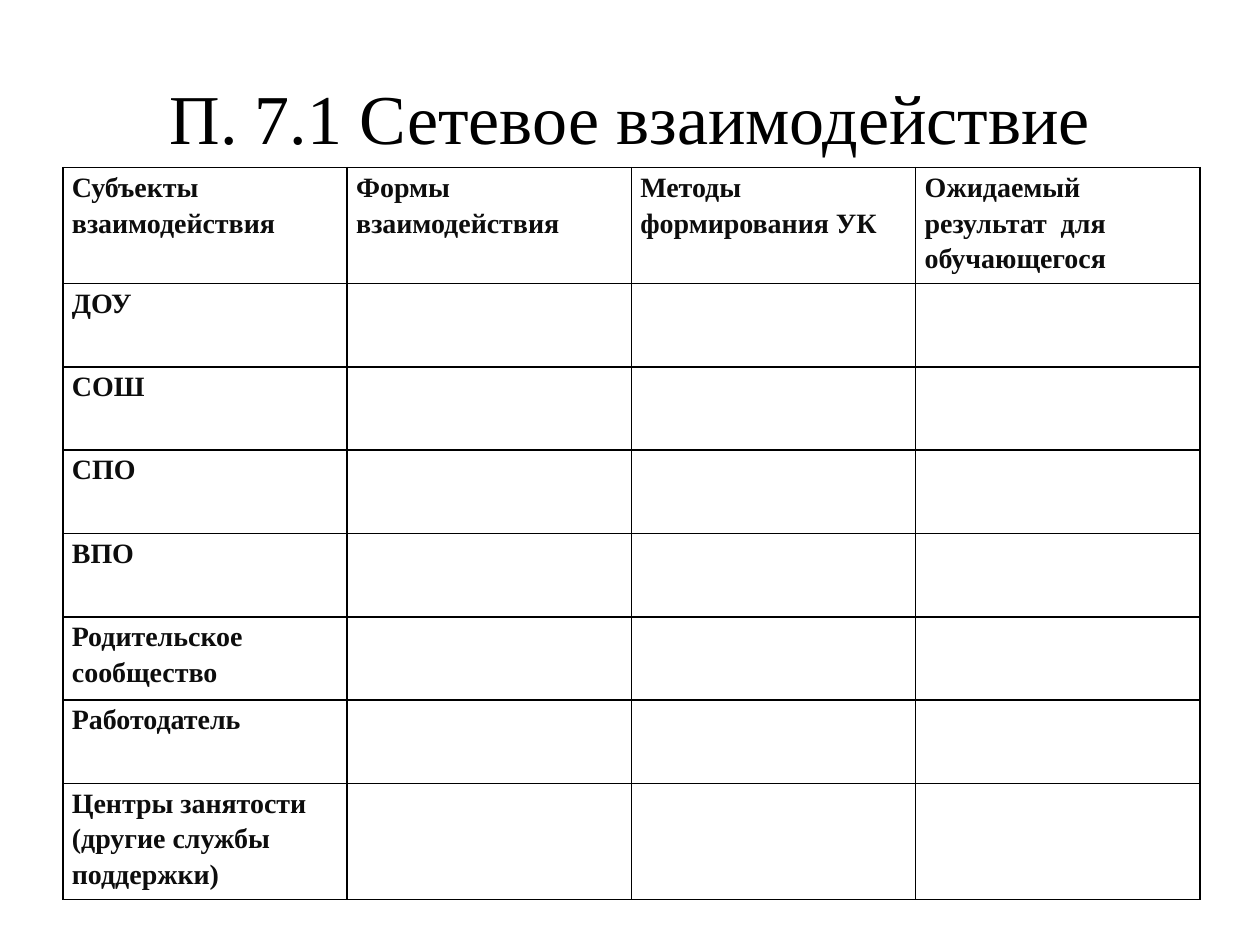
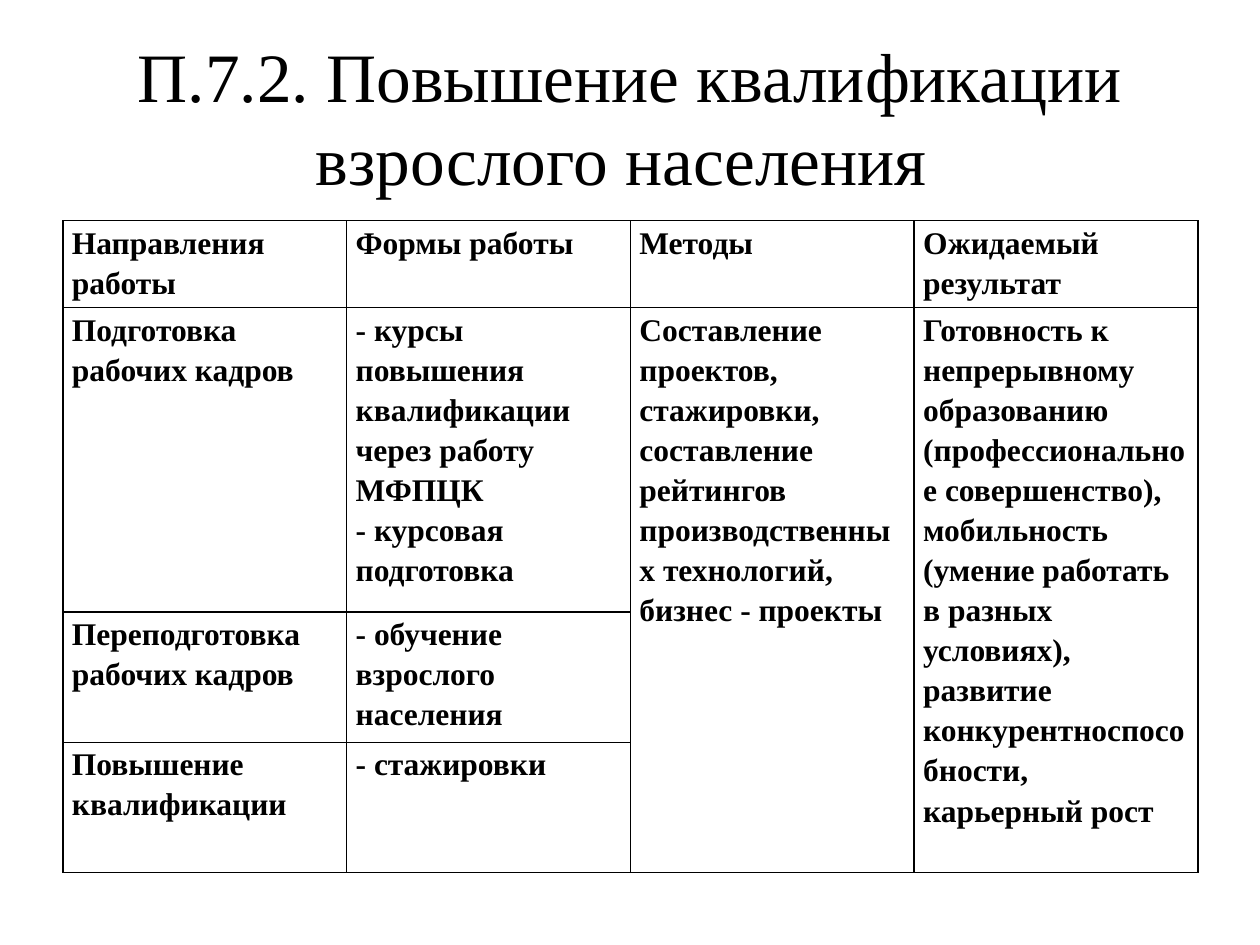
from lxml import etree
from pptx import Presentation
from pptx.dml.color import RGBColor
from pptx.enum.text import MSO_ANCHOR, PP_ALIGN
from pptx.oxml.ns import qn
from pptx.util import Cm, Pt

CENTER = PP_ALIGN.CENTER
MIDDLE = MSO_ANCHOR.MIDDLE

FONT = "Times New Roman"
BLACK = "000000"
DARK = "0D0D0D"
LEFT = 1.27
TITLE_BOX = (LEFT, 0.76, 22.86, 3.18)
CELL_MARGINS = {"margin_left": Cm(0.18), "margin_right": Cm(0.18),
                "margin_top": 0, "margin_bottom": 0}

# Each row lists its cells; a cell is a list of paragraphs or a single one.
SLIDES = [
    {
        "title": "П. 7.1 Сетевое взаимодействие",
        "title_size": 40,
        "top": 3.38,
        "column_width": 5.73,
        "row_heights": [2.15] + [1.68] * 6 + [2.2],
        "text": {"size": 16, "color": DARK},
        "rows": [
            ["Субъекты взаимодействия", "Формы взаимодействия",
             "Методы формирования УК", "Ожидаемый результат  для обучающегося"],
            ["ДОУ"],
            ["СОШ"],
            ["СПО"],
            ["ВПО"],
            ["Родительское сообщество"],
            ["Работодатель"],
            ["Центры занятости (другие службы поддержки)"],
        ],
        "merges": [],
    },
    {
        "title": "П.7.2. Повышение квалификации взрослого населения ",
        "title_size": 39.6,
        "top": 4.45,
        "column_width": 5.72,
        "row_heights": [1.61, 5.65, 2.42, 2.43],
        "text": {"size": 18, "color": BLACK},
        "rows": [
            ["Направления работы", "Формы работы", "Методы", "Ожидаемый результат"],
            ["Подготовка рабочих кадров",
             ["- курсы повышения квалификации через работу МФПЦК",
              "- курсовая подготовка"],
             "Составление проектов, стажировки, составление рейтингов "
             "производственных технологий, бизнес - проекты",
             "Готовность к непрерывному образованию (профессиональное "
             "совершенство), мобильность (умение работать в разных условиях), "
             "развитие конкурентноспособности, карьерный рост"],
            ["Переподготовка рабочих кадров", "- обучение взрослого населения"],
            ["Повышение квалификации", "- стажировки"],
        ],
        "merges": [((1, 2), (3, 2)), ((1, 3), (3, 3))],
    },
]


def style_font(font, size, color, bold=False):
    for name, value in {"name": FONT, "size": Pt(size), "bold": bold}.items():
        setattr(font, name, value)
    font.color.rgb = RGBColor.from_string(color)


def add_title(slide, text, size):
    frame = slide.shapes.add_textbox(*map(Cm, TITLE_BOX)).text_frame
    frame.word_wrap = True
    frame.vertical_anchor = MIDDLE
    paragraph = frame.paragraphs[0]
    paragraph.alignment = CENTER
    run = paragraph.add_run()
    run.text = text
    style_font(run.font, size, BLACK)


def add_borders(cell):
    properties = cell._tc.get_or_add_tcPr()
    for side in ("a:lnL", "a:lnR", "a:lnT", "a:lnB"):
        line = etree.SubElement(properties, qn(side), w=str(Pt(1)))
        fill = etree.SubElement(line, qn("a:solidFill"))
        etree.SubElement(fill, qn("a:srgbClr"), val=BLACK)


def fill_cell(cell, content, text):
    paragraphs = [content] if isinstance(content, str) else content
    cell.text = "\n".join(paragraphs)
    for paragraph in cell.text_frame.paragraphs:
        paragraph.line_spacing = 1.15
        for run in paragraph.runs:
            style_font(run.font, bold=True, **text)


def add_grid(slide, content):
    rows, heights = content["rows"], content["row_heights"]
    column_count = len(rows[0])
    width = content["column_width"]
    table = slide.shapes.add_table(
        len(rows), column_count, Cm(LEFT), Cm(content["top"]),
        Cm(width * column_count), Cm(sum(heights))).table
    table.first_row = table.horz_banding = False
    for column in table.columns:
        column.width = Cm(width)
    for row, height in zip(table.rows, heights):
        row.height = Cm(height)
        for cell in row.cells:
            add_borders(cell)
            cell.fill.background()
            for name, value in CELL_MARGINS.items():
                setattr(cell, name, value)
    for start, end in content["merges"]:
        table.cell(*start).merge(table.cell(*end))
    for row_index, row in enumerate(rows):
        for column_index, entry in enumerate(row):
            fill_cell(table.cell(row_index, column_index), entry, content["text"])


def main():
    deck = Presentation()
    deck.slide_width, deck.slide_height = Cm(25.4), Cm(19.05)
    blank = deck.slide_layouts[6]
    for content in SLIDES:
        slide = deck.slides.add_slide(blank)
        add_title(slide, content["title"], content["title_size"])
        add_grid(slide, content)
    deck.save("out.pptx")


if __name__ == "__main__":
    main()
